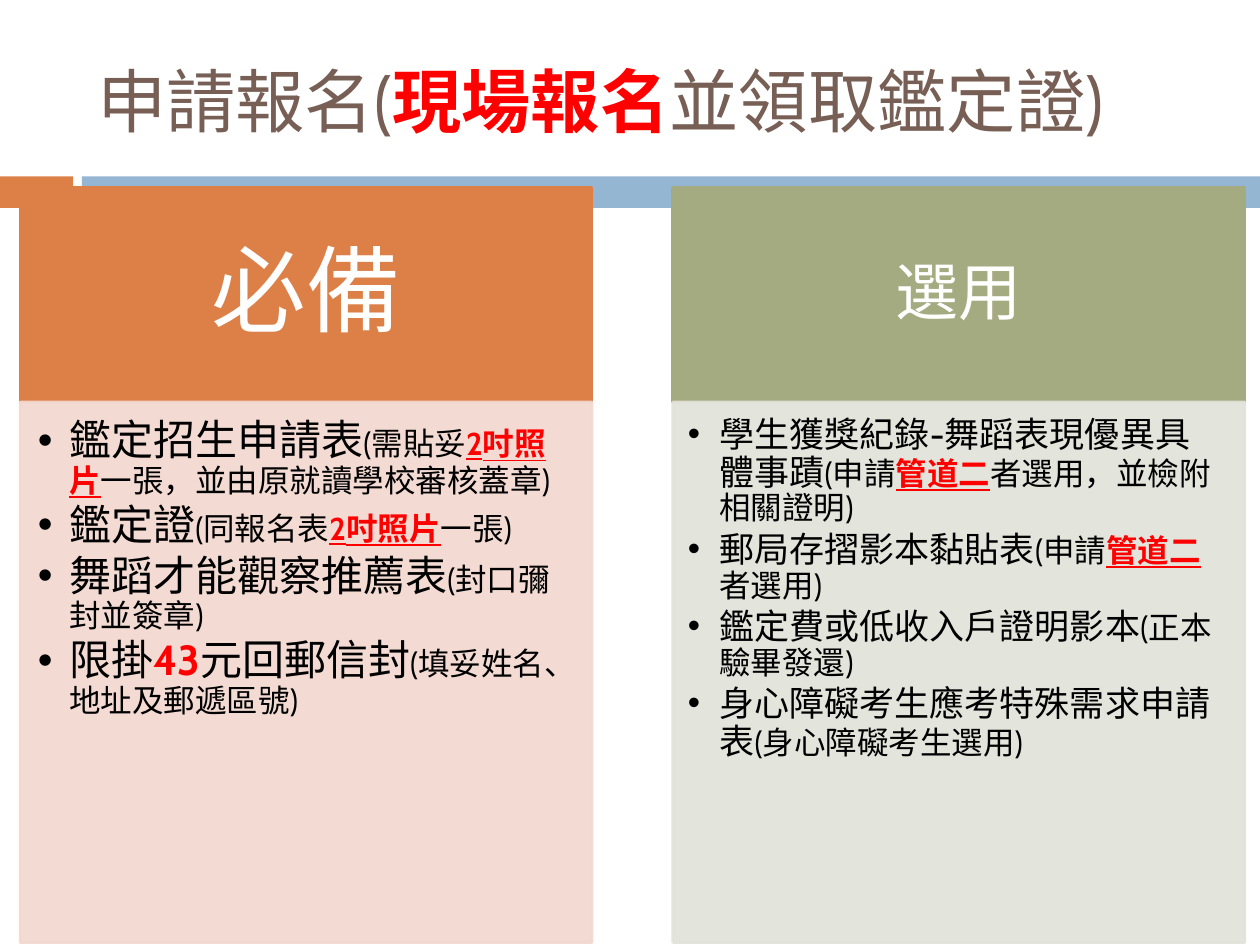
from lxml import etree
from pptx import Presentation
from pptx.dml.color import RGBColor
from pptx.enum.shapes import MSO_SHAPE
from pptx.enum.text import MSO_ANCHOR, MSO_AUTO_SIZE, PP_ALIGN
from pptx.oxml.ns import qn
from pptx.util import Inches, Pt

RECT = MSO_SHAPE.RECTANGLE
TOP, MIDDLE = MSO_ANCHOR.TOP, MSO_ANCHOR.MIDDLE
LEFT, CENTER = PP_ALIGN.LEFT, PP_ALIGN.CENTER
FIXED = MSO_AUTO_SIZE.NONE

FONT = "Cabin"
ORANGE, BLUE, GREEN = "DD8047", "94B6D2", "A5AB81"
PINK, PALE = "F2D8CF", "E1E2D8"
BROWN, RED, BLACK, WHITE = "775F55", "FF0000", "000000", "FFFFFF"
SMALL = 18
HEAD_H = 1.7
HOT = {"bold": True, "underline": True}
BOLD = {"bold": True}

TITLE = [("申請報名(", 39.6, {}), ("現場報名", 39.6, BOLD),
         ("並領取鑑定證)", 39.6, {})]

# Each item is a list of runs: text, size, format
NEEDED = [
    [("鑑定招生申請表", 24, {}), ("(需貼妥", SMALL, {}),
     ("2吋照片", SMALL, HOT), ("一張，並由原就讀學校審核蓋章)", SMALL, {})],
    [("鑑定證", 24, {}), ("(同報名表", SMALL, {}),
     ("2吋照片", SMALL, HOT), ("一張)", SMALL, {})],
    [("舞蹈才能觀察推薦表", 24, {}), ("(封口彌封並簽章)", SMALL, {})],
    [("限掛", 24, {}), ("43", 24, BOLD), ("元回郵信封", 24, {}),
     ("(填妥姓名、地址及郵遞區號)", SMALL, {})],
]
CHOICE = [
    [("學生獲獎紀錄-舞蹈表現優異具體事蹟", 20, {}), ("(申請", SMALL, {}),
     ("管道二", SMALL, HOT), ("者選用，並檢附相關證明)", SMALL, {})],
    [("郵局存摺影本黏貼表", 20, {}), ("(申請", SMALL, {}),
     ("管道二", SMALL, HOT), ("者選用)", SMALL, {})],
    [("鑑定費或低收入戶證明影本", 20, {}), ("(正本驗畢發還)", SMALL, {})],
    [("身心障礙考生應考特殊需求申請表", 20, {}),
     ("(身心障礙考生選用)", SMALL, {})],
]


def rgb(code):
    return RGBColor.from_string(code)


def put(item, **values):
    for name, value in values.items():
        setattr(item, name, value)


def add_runs(para, runs, color):
    """Emphasised runs turn red; the rest take the given colour."""
    for text, size, look in runs:
        run = para.add_run()
        run.text = text
        put(run.font, name=FONT, size=Pt(size), **look)
        run.font.color.rgb = rgb(RED if look else color)


def add_box(slide, box, color, edge=False):
    shape = slide.shapes.add_shape(RECT, *map(Inches, box))
    shape.shadow.inherit = False
    shape.fill.solid()
    shape.fill.fore_color.rgb = rgb(color)
    if edge:
        shape.line.color.rgb = rgb(color)
        shape.line.width = Pt(1.5)
    else:
        shape.line.fill.background()
    return shape


def set_frame(shape, anchor, pads):
    frame = shape.text_frame
    sides = ("margin_left", "margin_top", "margin_right", "margin_bottom")
    put(frame, word_wrap=True, auto_size=FIXED, vertical_anchor=anchor,
        **dict(zip(sides, map(Inches, pads))))
    return frame


def fade(shape, percent):
    for color in shape._element.spPr.iter(qn("a:srgbClr")):
        etree.SubElement(color, qn("a:alpha"), val=str(percent * 1000))


def add_bullet(para):
    props = para._p.get_or_add_pPr()
    props.set("marL", str(Inches(0.25)))
    props.set("indent", str(-Inches(0.25)))
    etree.SubElement(props, qn("a:buFont"), typeface="Arial")
    etree.SubElement(props, qn("a:buChar"), char="•")


def add_title(slide, box):
    title = slide.shapes.title
    left, top, width, height = map(Inches, box)
    put(title, left=left, top=top, width=width, height=height)
    frame = set_frame(title, MIDDLE, (0.1, 0.05, 0.1, 0.05))
    para = frame.paragraphs[0]
    para.alignment = LEFT
    add_runs(para, TITLE, BROWN)


def add_bands(slide, box):
    left, top, width, height = box
    add_box(slide, (left, top, 0.58, height), ORANGE)
    add_box(slide, (left + 0.65, top, width - 0.65, height), BLUE)


def add_panel(slide, box, head, size, pads, items, inner, colors):
    left, top, width, height = box
    # Heading block
    cap = add_box(slide, (left, top, width, HEAD_H), colors[0], True)
    para = set_frame(cap, MIDDLE, pads).paragraphs[0]
    put(para, alignment=CENTER, line_spacing=0.9)
    add_runs(para, [(head, size, {})], WHITE)
    # Bulleted list
    body = add_box(slide, (left, top + HEAD_H, width, height - HEAD_H),
                   colors[1], True)
    fade(body, 90)
    frame = set_frame(body, TOP, inner)
    for i, runs in enumerate(items):
        para = frame.add_paragraph() if i else frame.paragraphs[0]
        put(para, level=1, alignment=LEFT, line_spacing=0.9,
            space_after=Pt(3))
        add_bullet(para)
        add_runs(para, runs, BLACK)


def main():
    deck = Presentation()
    put(deck, slide_width=Inches(10), slide_height=Inches(7.5))
    slide = deck.slides.add_slide(deck.slide_layouts[5])
    add_bands(slide, (0, 1.4, 10, 0.25))
    add_title(slide, (0.67, 0.25, 8.92, 1.08))
    add_panel(slide, (0.16, 1.49, 4.54, 5.99), "必備", 54,
              (0.42, 0.24, 0.42, 0.24), NEEDED,
              (0.14, 0.14, 0.19, 0.21), (ORANGE, PINK))
    add_panel(slide, (5.34, 1.49, 4.54, 5.99), "選用", 36,
              (0.28, 0.16, 0.28, 0.16), CHOICE,
              (0.12, 0.12, 0.16, 0.17), (GREEN, PALE))
    deck.save("out.pptx")


if __name__ == "__main__":
    main()
